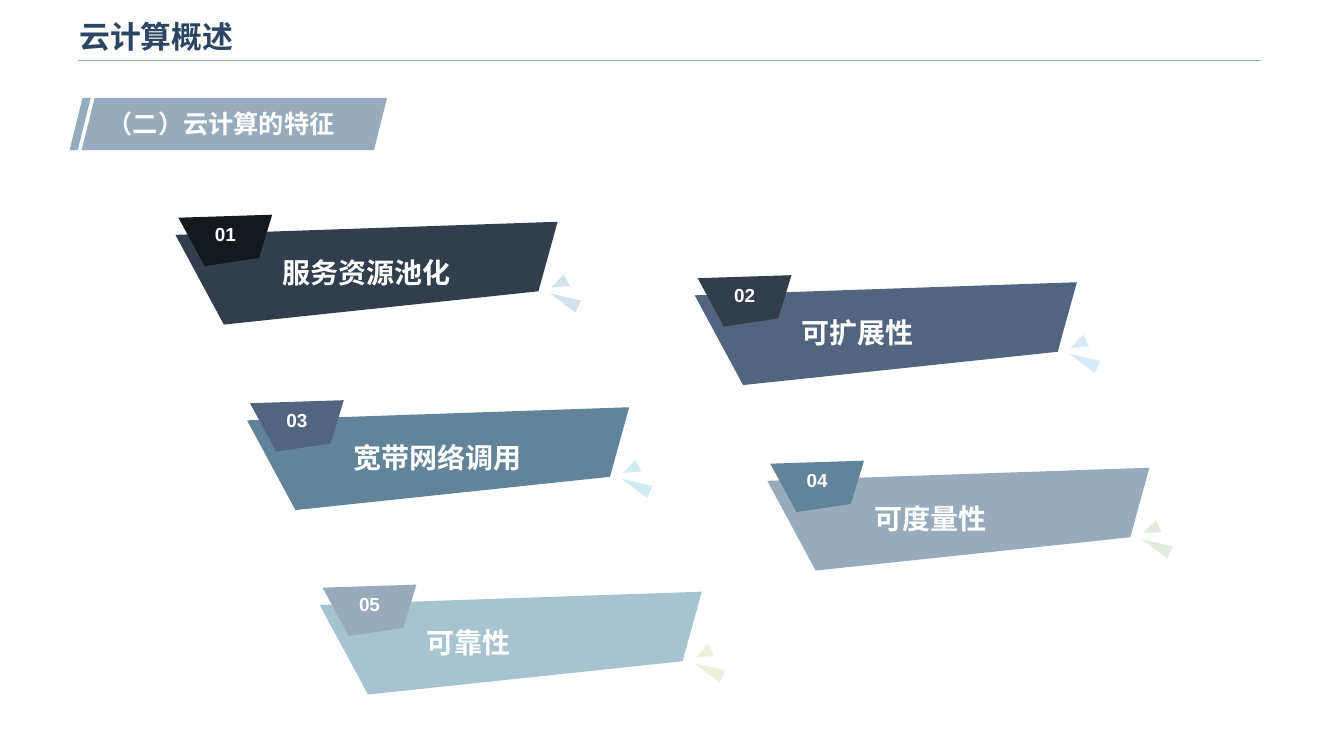
from lxml.etree import SubElement
from pptx import Presentation
from pptx.dml.color import RGBColor
from pptx.enum.shapes import MSO_CONNECTOR, MSO_SHAPE
from pptx.enum.text import MSO_ANCHOR, PP_ALIGN
from pptx.oxml.ns import qn
from pptx.util import Pt

PX = 9144  # EMU per px, 100 px to the inch
LATIN = "Arial"
CHINESE = "Noto Sans CJK SC"
WHITE = "FFFFFF"

# Outlines relative to the top left corner of a banner
BANNER = [(379, 0), (360, 69), (48, 102), (0, 13)]
BADGE = [(96, -7), (83, 36), (29, 44), (3, -4)]
# left, top, width, height, rotation
SPARKS = [(379, 62, 13, 31, 295.1), (374, 53, 13, 17, 244.7)]

# left, top, number, label, banner colour, badge colour, spark colour
FEATURES = [
    (174, 220, "01", "服务资源池化", "323E4B", "14191E", "1F74AD"),
    (689, 280, "02", "可扩展性", "526580", "323E4B", "3498DB"),
    (245, 404, "03", "宽带网络调用", "61849B", "526580", "1AA3AA"),
    (761, 464, "04", "可度量性", "97ABBD", "61849B", "69A35B"),
    (317, 587, "05", "可靠性", "A6C4D0", "97ABBD", "9BBB59"),
]


def paint(fill, color, opacity=100):
    fill.solid()
    fill.fore_color.rgb = RGBColor.from_string(color)
    if opacity < 100:
        srgb = fill._xPr.find(".//" + qn("a:srgbClr"))
        SubElement(srgb, qn("a:alpha"), val=str(opacity * 1000))


def finish(shape, color, opacity=100):
    """Give a shape a flat fill with no line and no shadow."""
    paint(shape.fill, color, opacity)
    shape.line.fill.background()
    shape.shadow.inherit = False


def add_preset(shapes, kind, left, top, width, height, color, opacity=100):
    shape = shapes.add_shape(kind, left * PX, top * PX, width * PX, height * PX)
    finish(shape, color, opacity)
    return shape


def add_outline(shapes, left, top, points, color):
    corners = [(left + x, top + y) for x, y in points]
    builder = shapes.build_freeform(*corners[0], scale=PX)
    builder.add_line_segments(corners[1:], close=True)
    finish(builder.convert_to_shape(), color)


def add_text(shapes, left, top, width, height, text, size, font=CHINESE,
             color=WHITE, anchor=MSO_ANCHOR.TOP, wrap=True):
    box = shapes.add_textbox(left * PX, top * PX, width * PX, height * PX)
    frame = box.text_frame
    frame.word_wrap = wrap
    frame.vertical_anchor = anchor
    para = frame.paragraphs[0]
    para.text = text
    para.font.size = Pt(size)
    para.font.bold = True
    para.font.name = font
    para.font.color.rgb = RGBColor.from_string(color)
    defaults = para._p.pPr.find(qn("a:defRPr"))
    SubElement(defaults, qn("a:ea"), typeface=CHINESE)
    return para


def add_header(shapes):
    rule = shapes.add_connector(
        MSO_CONNECTOR.STRAIGHT, 77 * PX, 60 * PX, 1251 * PX, 60 * PX)
    rule.line.color.rgb = RGBColor.from_string("98B4D2")
    rule.line.width = Pt(1)
    SubElement(rule._element.spPr, qn("a:effectLst"))
    add_text(shapes, 69, 9, 1071, 53, "云计算概述", 22, LATIN, "2B4663",
             MSO_ANCHOR.MIDDLE)


def add_section_tag(page):
    shapes = page.shapes.add_group_shape().shapes
    for left, width, slant, color in [(69, 21, 0.613, "94ACBC"),
                                      (81, 303, 0.25, "97ABBD")]:
        bar = add_preset(shapes, MSO_SHAPE.PARALLELOGRAM, left, 97, width, 52, color)
        bar.adjustments[0] = slant
    add_text(page.shapes, 97, 103, 247, 40, "（二）云计算的特征", 18)


def add_feature(page, left, top, number, label, banner, badge, spark):
    shapes = page.shapes.add_group_shape().shapes
    add_outline(shapes, left, top, BANNER, banner)
    for x, y, width, height, rotation in SPARKS:
        triangle = add_preset(shapes, MSO_SHAPE.ISOSCELES_TRIANGLE, left + x,
                              top + y, width, height, spark, 20)
        triangle.rotation = rotation
    add_outline(shapes, left, top, BADGE, badge)
    para = add_text(shapes, left + 23, top - 4, 53, 44, number, 13.5, LATIN,
                    wrap=False)
    para.alignment = PP_ALIGN.CENTER
    para = add_text(shapes, left + 96, top + 17, 245, 59, label, 20,
                    anchor=MSO_ANCHOR.MIDDLE)
    para.line_spacing = 1.2


def main():
    deck = Presentation()
    deck.slide_width = 1333 * PX
    deck.slide_height = 750 * PX
    page = deck.slides.add_slide(deck.slide_layouts[6])
    add_header(page.shapes)
    add_section_tag(page)
    for feature in FEATURES:
        add_feature(page, *feature)
    deck.save("out.pptx")


if __name__ == "__main__":
    main()
